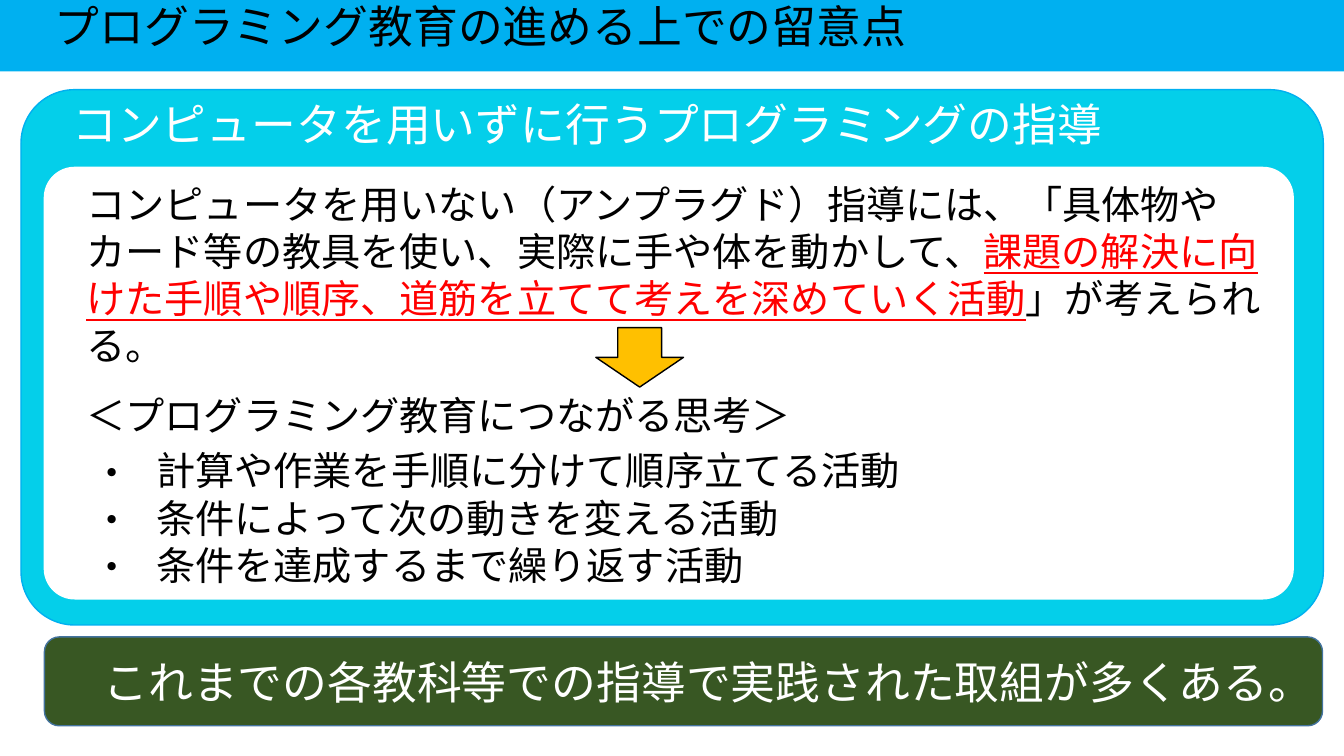
"""Build a slide on teaching programming without computers."""
import lxml.etree
import pptx
import pptx.dml.color
import pptx.enum.shapes
import pptx.enum.text
import pptx.oxml.ns
import pptx.util

Cm = pptx.util.Cm
SHAPES = pptx.enum.shapes.MSO_SHAPE
ANCHORS = pptx.enum.text.MSO_ANCHOR

TITLE = "プログラミング教育の進める上での留意点"
HEADING = "コンピュータを用いずに行うプログラミングの指導"
METHOD = [
    ("コンピュータを用いない（アンプラグド）指導には、「具体物やカード等の教具を使い、実際に手や体を動かして、", False),
    ("課題の解決に向けた手順や順序、道筋を立てて考えを深めていく活動", True),
    ("」が考えられる。", False),
]
THINKING = "＜プログラミング教育につながる思考＞"
ACTIVITIES = [
    "計算や作業を手順に分けて順序立てる活動",
    "条件によって次の動きを変える活動",
    "条件を達成するまで繰り返す活動",
]
CONCLUSION = "これまでの各教科等での指導で実践された取組が多くある。"

THEME = {
    "banner": "00B0F0", "frame": "04CFEA", "paper": "FFFFFF", "ink": "000000",
    "accent": "FF0000", "footer": "385723", "footer_line": "43739E", "arrow": "FFC000",
    "large": 32, "body": 28, "font": "Arial", "japanese_font": "Noto Sans CJK JP",
}
SLIDE_WIDTH, SLIDE_HEIGHT = 33.87, 19.05
FRAME = (0.53, 2.26, 32.82, 13.49)
PANEL = (1.12, 4.22, 31.47, 10.87)
FOOTER = (1.12, 16.05, 32.21, 2.24)
ARROW = (15.37, 7.9, 1.5, 2.21)
TEXT_LEFT = 1.93
FIRST_INDENT = 1.38


def rgb(name):
    return pptx.dml.color.RGBColor.from_string(THEME[name])


def add_box(page, kind, place, fill, line=None, corner=None):
    box = page.shapes.add_shape(kind, *map(Cm, place))
    box.shadow.inherit = False
    box.fill.solid()
    box.fill.fore_color.rgb = rgb(fill)
    if line:
        box.line.color.rgb = rgb(line)
        box.line.width = pptx.util.Pt(1)
    else:
        box.line.fill.background()
    if corner:
        box.adjustments[0] = corner
    return box


def add_text_box(page, place):
    box = page.shapes.add_textbox(*map(Cm, place))
    box.text_frame.auto_size = pptx.enum.text.MSO_AUTO_SIZE.SHAPE_TO_FIT_TEXT
    return box


def set_frame(box, left=0.25, top=0.13, anchor=ANCHORS.TOP):
    frame = box.text_frame
    frame.word_wrap = True
    frame.vertical_anchor = anchor
    frame.margin_left, frame.margin_top = Cm(left), Cm(top)
    return frame.paragraphs[0]


def write(para, text, size="body", color="ink", font="font", underline=False, shadow=False):
    para.alignment = pptx.enum.text.PP_ALIGN.LEFT
    span = para.add_run()
    span.text = text
    span.font.size = pptx.util.Pt(THEME[size])
    span.font.name = THEME[font]
    span.font.color.rgb = rgb(color)
    span.font.underline = underline or None
    if shadow:
        add_text_shadow(span)


def add_text_shadow(span):
    qn = pptx.oxml.ns.qn
    effects = lxml.etree.Element(qn("a:effectLst"))
    shade = lxml.etree.SubElement(effects, qn("a:outerShdw"), blurRad="38100", dist="38100", dir="2700000")
    color = lxml.etree.SubElement(shade, qn("a:srgbClr"), val=THEME["ink"])
    lxml.etree.SubElement(color, qn("a:alpha"), val="40000")
    span.font.fill._xPr.find(qn("a:solidFill")).addnext(effects)


def add_bullet(para, left=1.76, hang=1.62):
    qn = pptx.oxml.ns.qn
    properties = para._p.get_or_add_pPr()
    properties.set("marL", str(Cm(left)))
    properties.set("indent", str(-Cm(hang)))
    lxml.etree.SubElement(properties, qn("a:buFont"), typeface=THEME["japanese_font"])
    lxml.etree.SubElement(properties, qn("a:buChar"), char="・")


def main():
    deck = pptx.Presentation()
    deck.slide_width, deck.slide_height = Cm(SLIDE_WIDTH), Cm(SLIDE_HEIGHT)
    page = deck.slides.add_slide(deck.slide_layouts[6])

    banner = add_box(page, SHAPES.RECTANGLE, (0, 0, SLIDE_WIDTH, 1.8), "banner")
    para = set_frame(banner, left=FIRST_INDENT)
    para.line_spacing = 0.9
    write(para, TITLE, size="large", font="japanese_font")

    frame = add_box(page, SHAPES.ROUNDED_RECTANGLE, FRAME, "frame", "banner", 0.1)
    write(set_frame(frame, left=0.9, top=-0.22), HEADING, size="large", color="paper", shadow=True)
    add_box(page, SHAPES.ROUNDED_RECTANGLE, PANEL, "paper", "paper", 0.07)

    para = set_frame(add_text_box(page, (TEXT_LEFT, 4.42, 30.23, 3.84)))
    for text, key in METHOD:
        write(para, text, color="accent" if key else "ink", underline=key)

    thinking = add_text_box(page, (TEXT_LEFT, 9.73, 25.37, 5.33))
    write(set_frame(thinking), THINKING)
    for index, activity in enumerate(ACTIVITIES):
        para = thinking.text_frame.add_paragraph()
        para.space_before = pptx.util.Pt(0 if index else 6)
        add_bullet(para)
        write(para, activity)

    footer = add_box(page, SHAPES.ROUNDED_RECTANGLE, FOOTER, "footer", "footer_line")
    para = set_frame(footer, left=FIRST_INDENT, anchor=ANCHORS.MIDDLE)
    write(para, CONCLUSION, size="large", color="paper")

    arrow = add_box(page, SHAPES.RIGHT_ARROW, ARROW, "arrow", "ink")
    arrow.rotation = 90
    deck.save("out.pptx")


if __name__ == "__main__":
    main()
